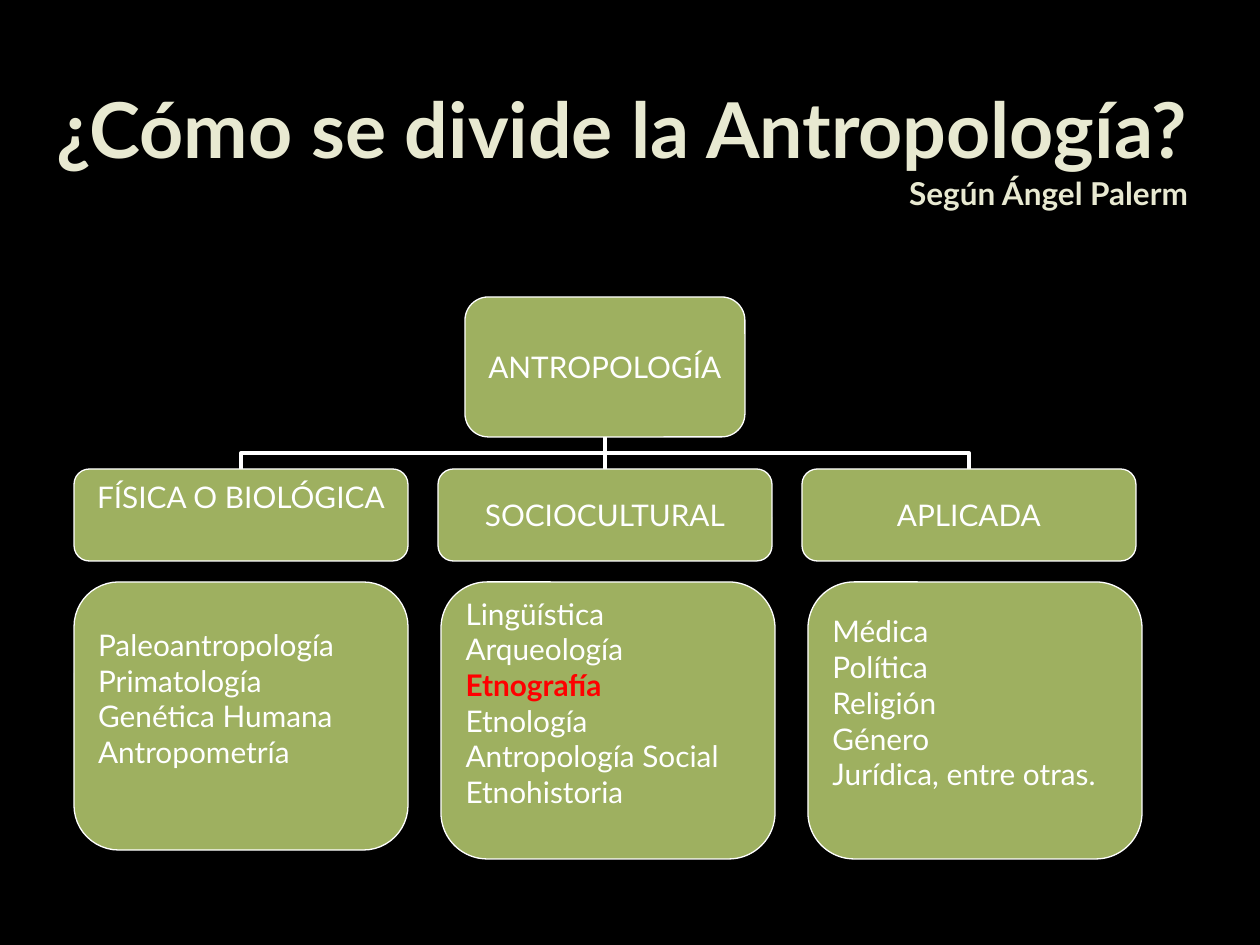
"""Build a slide with the branches of anthropology as a tree."""
from dataclasses import dataclass

from pptx import Presentation
from pptx.dml.color import RGBColor
from pptx.enum.shapes import MSO_CONNECTOR, MSO_SHAPE
from pptx.enum.text import MSO_ANCHOR, PP_ALIGN
from pptx.oxml.ns import qn
from pptx.util import Pt
from lxml.etree import SubElement

EMU_PER_PX = 914400 / 126


def px(length):
    return round(length * EMU_PER_PX)


def assign(target, formats):
    for name, value in formats.items():
        setattr(target, name, value)


@dataclass(frozen=True)
class Theme:
    font: str = "Lato"
    background: str = "000000"
    heading: str = "E8E9D1"
    box: str = "9EB060"
    text: str = "FFFFFF"
    line: str = "FFFFFF"
    accent: str = "FF0000"
    heading_size: float = 44
    subheading_size: float = 18
    body_size: float = 17
    border_width: float = 0.75
    link_width: float = 2.25


class TreeSlide:
    def __init__(self, slide, theme):
        self.slide, self.theme = slide, theme
        fill = slide.background.fill
        fill.solid()
        fill.fore_color.rgb = RGBColor.from_string(theme.background)

    def fill_text(self, frame, lines, align, anchor, top=6, bottom=6):
        assign(frame, {
            "word_wrap": True, "vertical_anchor": anchor,
            "margin_left": px(11), "margin_right": px(11),
            "margin_top": px(top), "margin_bottom": px(bottom),
        })
        for index, (wording, size, color, bold) in enumerate(lines):
            paragraph = frame.add_paragraph() if index else frame.paragraphs[0]
            paragraph.alignment = align
            run = paragraph.add_run()
            run.text = wording
            assign(run.font, {"name": self.theme.font, "size": Pt(size), "bold": bold})
            run.font.color.rgb = RGBColor.from_string(color)

    def heading(self, area, title, subtitle):
        theme = self.theme
        frame = self.slide.shapes.add_textbox(*map(px, area)).text_frame
        lines = [(title, theme.heading_size, theme.heading, True),
                 (subtitle, theme.subheading_size, theme.heading, True)]
        self.fill_text(frame, lines, PP_ALIGN.RIGHT, MSO_ANCHOR.BOTTOM)

    def box(self, area, entries, align=PP_ALIGN.CENTER, highlight=None, top=6, bottom=6):
        theme = self.theme
        box = self.slide.shapes.add_shape(MSO_SHAPE.ROUNDED_RECTANGLE, *map(px, area))
        box.shadow.inherit = False
        box.fill.solid()
        box.fill.fore_color.rgb = RGBColor.from_string(theme.box)
        box.line.color.rgb = RGBColor.from_string(theme.line)
        box.line.width = Pt(theme.border_width)
        lines = [(entry, theme.body_size,
                  theme.accent if entry == highlight else theme.text,
                  entry == highlight) for entry in entries]
        self.fill_text(box.text_frame, lines, align, MSO_ANCHOR.MIDDLE, top, bottom)

    def link(self, child_x, child_y, parent_x, parent_y):
        span, drop = abs(child_x - parent_x), child_y - parent_y
        if span:
            left = (child_x + parent_x - drop) / 2
            top = (child_y + parent_y - span) / 2
            kind, ends = MSO_CONNECTOR.ELBOW, [left, top, left + drop, top + span]
            if child_x > parent_x:
                ends[0], ends[2] = ends[2], ends[0]
        else:
            kind, ends = MSO_CONNECTOR.STRAIGHT, [child_x, child_y, parent_x, parent_y]
        link = self.slide.shapes.add_connector(kind, *map(px, ends))
        link.line.color.rgb = RGBColor.from_string(self.theme.line)
        link.line.width = Pt(self.theme.link_width)
        properties = link.element.spPr
        SubElement(properties, qn("a:effectLst"))
        if span:
            turn = 90 if child_x > parent_x else 270
            properties.find(qn("a:xfrm")).set("rot", str(turn * 60000))


BRANCHES = [
    ("FÍSICA O BIOLÓGICA", 36, 268,
     ["Paleoantropología", "Primatología", "Genética Humana", "Antropometría"]),
    ("SOCIOCULTURAL", 0, 277,
     ["Lingüística", "Arqueología", "Etnografía", "Etnología",
      "Antropología Social", "Etnohistoria"]),
    ("APLICADA", 0, 277,
     ["Médica", "Política", "Religión", "Género", "Jurídica, entre otras."]),
]


def main():
    deck = Presentation()
    assign(deck, {"slide_width": px(1260), "slide_height": px(945)})
    tree = TreeSlide(deck.slides.add_slide(deck.slide_layouts[6]), Theme())
    tree.heading((13, 68, 1186, 150), "¿Cómo se divide la Antropología?",
                 "Según Ángel Palerm")

    left, width, branch_step, list_step = 74, 334, 364, 367
    branch_top, list_top, root_bottom = 469, 582, 437
    root_center = left + branch_step + width // 2
    for column in reversed(range(len(BRANCHES))):
        tree.link(left + column * branch_step + width // 2, branch_top,
                  root_center, root_bottom)

    tree.box((465, 297, 280, 140), ["ANTROPOLOGÍA"])
    for column, (branch, lift, height, fields) in enumerate(BRANCHES):
        tree.box((left + column * branch_step, branch_top, width, 92), [branch],
                 bottom=6 + lift)
        tree.box((left + column * list_step, list_top, width, height), fields,
                 PP_ALIGN.LEFT, "Etnografía", top=0, bottom=36)
    deck.save("out.pptx")


if __name__ == "__main__":
    main()
